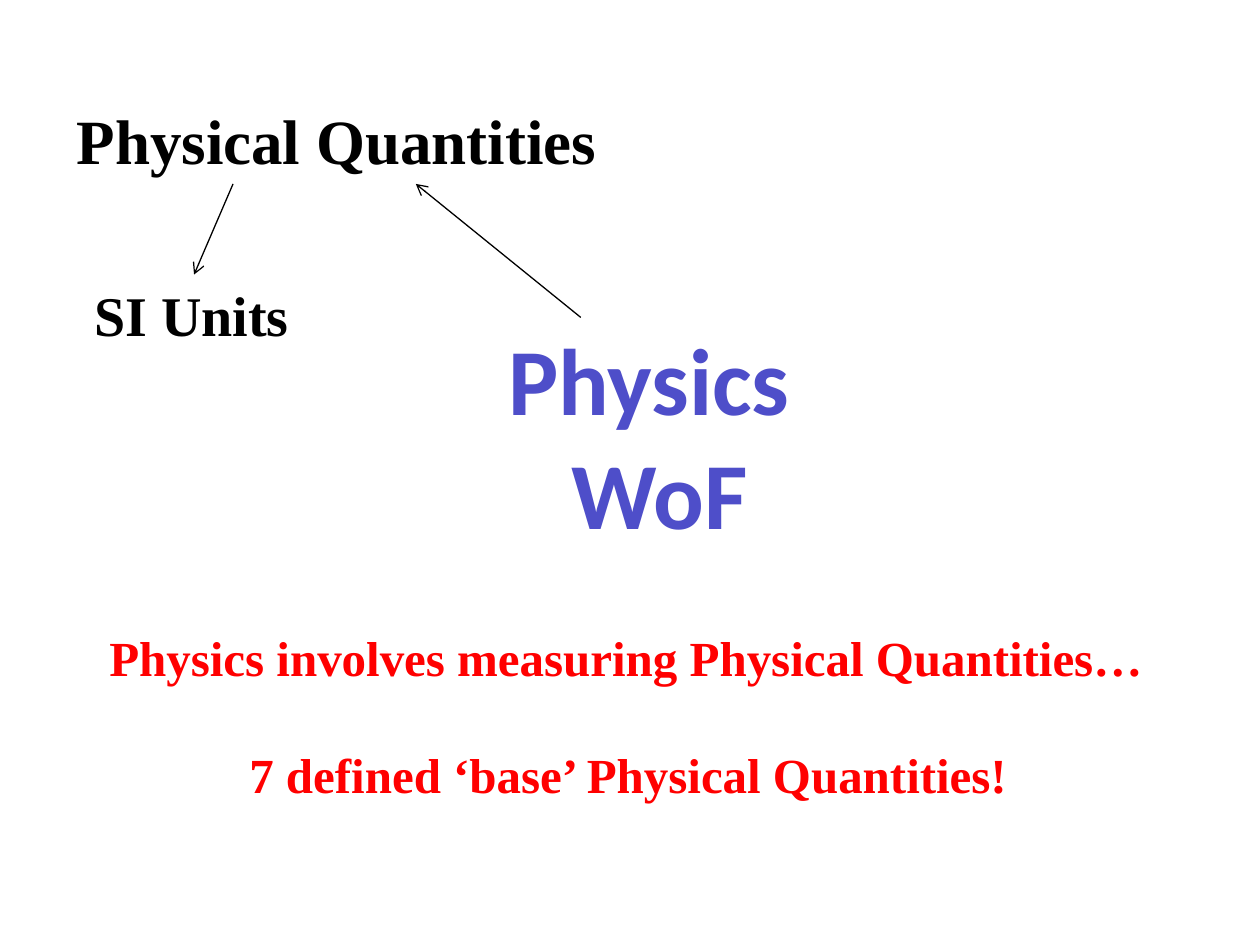
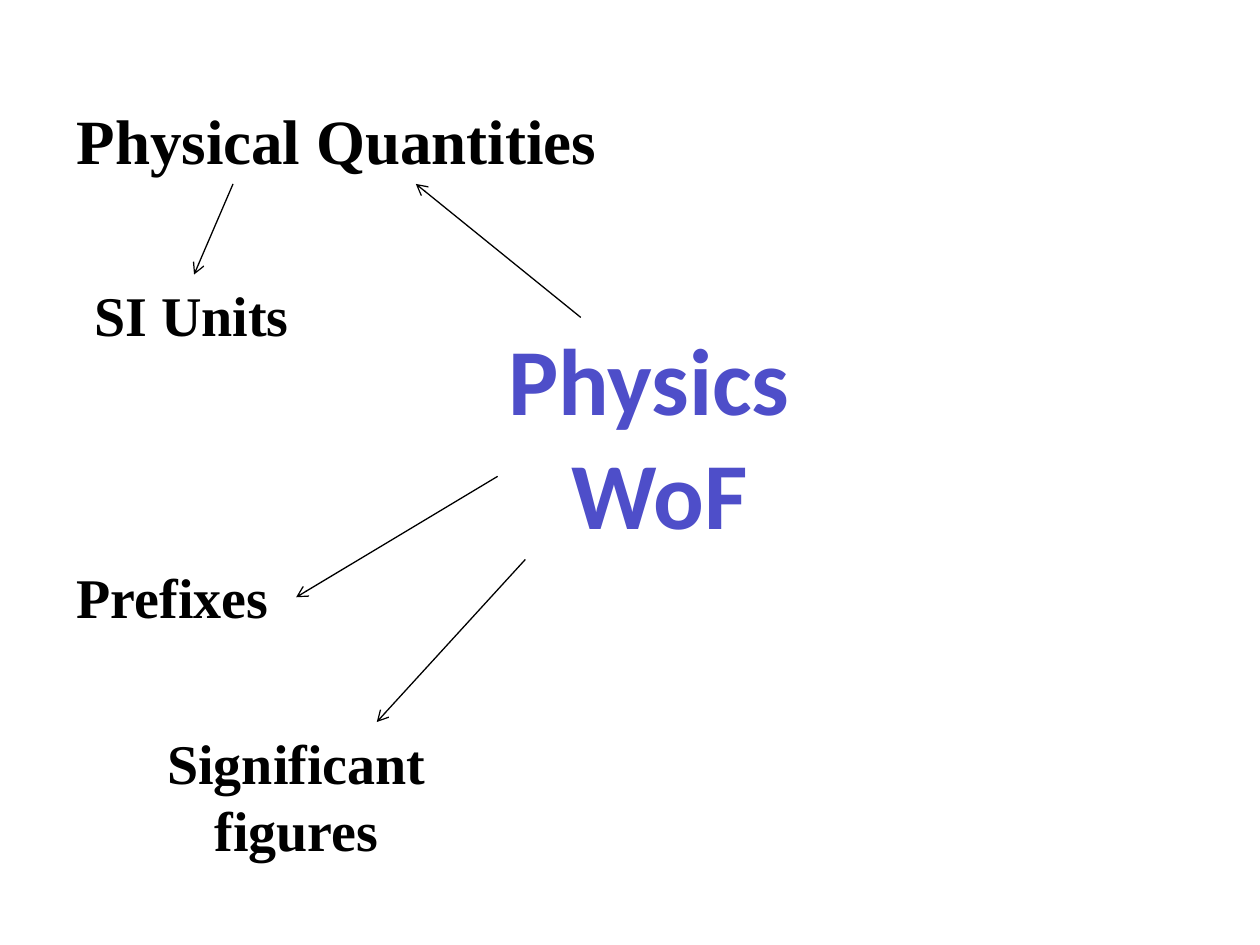
from lxml.etree import SubElement
from pptx import Presentation
from pptx.dml.color import RGBColor
from pptx.enum.text import MSO_ANCHOR, MSO_AUTO_SIZE, PP_ALIGN
from pptx.oxml.ns import qn
from pptx.util import Pt

COLORS = {"ink": "000000", "note": "FF0000",
          "edge": "5B5BCB", "mid": "4E4EC9", "core": "2424B7"}
HUB_STOPS = [(0, "edge"), (25, "mid"), (50, "core"), (75, "mid"), (100, "edge")]
SERIF, SANS = "Times New Roman", "Calibri"


def gradient(font):
    font.fill.gradient()
    font.fill.gradient_angle = 270
    stops = font._element.find(qn("a:gradFill")).find(qn("a:gsLst"))
    for old in list(stops):
        stops.remove(old)
    for pos, name in HUB_STOPS:
        gs = SubElement(stops, qn("a:gs"), pos=str(pos * 1000))
        SubElement(gs, qn("a:srgbClr"), val=COLORS[name])


def write(sp, text, size=32, font=SERIF, color="ink", align=PP_ALIGN.LEFT, wrap=False):
    tf = sp.text_frame
    tf.word_wrap = wrap
    tf.auto_size = MSO_AUTO_SIZE.SHAPE_TO_FIT_TEXT
    tf.vertical_anchor = MSO_ANCHOR.TOP
    for i, line in enumerate(text.split("\n")):
        p = tf.add_paragraph() if i else tf.paragraphs[0]
        p.alignment = align
        r = p.add_run()
        r.text = line
        r.font.size, r.font.name, r.font.bold = Pt(size), font, True
        if color == "hub":
            gradient(r.font)
        else:
            r.font.color.rgb = RGBColor.from_string(COLORS[color])


def label(s, text, x, y, w, h, **fmt):
    write(s.shapes.add_textbox(Pt(x), Pt(y), Pt(w), Pt(h)), text, **fmt)


def arrow(s, x1, y1, x2, y2):
    cn = s.shapes.add_connector(1, Pt(x1), Pt(y1), Pt(x2), Pt(y2))
    cn.line.width = Pt(0.75)
    cn.line.color.rgb = RGBColor.from_string(COLORS["ink"])
    SubElement(cn.line._get_or_add_ln(), qn("a:tailEnd"), type="arrow")
    SubElement(cn._element.spPr, qn("a:effectLst"))


def hub(s, x, y, w, h):
    sp = s.shapes.title
    sp.left, sp.top, sp.width, sp.height = Pt(x), Pt(y), Pt(w), Pt(h)
    write(sp, "Physics \nWoF", size=54, font=SANS, color="hub", align=PP_ALIGN.CENTER)


def quantities(s, x, y, w, h):
    label(s, "Physical Quantities", x, y, w, 51.1, size=36)
    label(s, "SI Units", x + 10.1, y + h - 46.1, 126.7, 46.1)
    arrow(s, x + 295.2, y + 126.7, x + 200.9, y + 50.4)
    arrow(s, x + 96.5, y + 50.4, x + 74.2, y + 102.2)


def notes(s, x, y, w, h):
    label(s, "Physics involves measuring Physical Quantities…",
          x, y, w, 41, size=28, color="note", wrap=True)
    label(s, "7 defined ‘base’ Physical Quantities!",
          x + 80, y + h - 41, w, 41, size=28, color="note", wrap=True)


def skills(s, x, y, w, h):
    label(s, "Prefixes", x, y + 46, 125.3, 46.1)
    arrow(s, x + w - 15.8, y, x + 132.5, y + 69.1)
    arrow(s, x + w, y + 47.5, x + 178.6, y + 140.4)
    label(s, "Significant \nfigures ", x + 51.1, y + h - 85, 171.4, 85,
          align=PP_ALIGN.CENTER)


def map_slide(prs, region, box):
    s = prs.slides.add_slide(prs.slide_layouts[5])
    hub(s, 282.2, 180, 189.4, 138.2)
    quantities(s, 36.7, 54.7, 314.6, 148.4)
    region(s, *box)


def main():
    prs = Presentation()
    prs.slide_width, prs.slide_height = Pt(720), Pt(540)
    map_slide(prs, notes, (55.4, 355, 614.9, 107.9))
    map_slide(prs, skills, (36.7, 272.2, 263.5, 225.4))
    prs.save("out.pptx")


if __name__ == "__main__":
    main()
